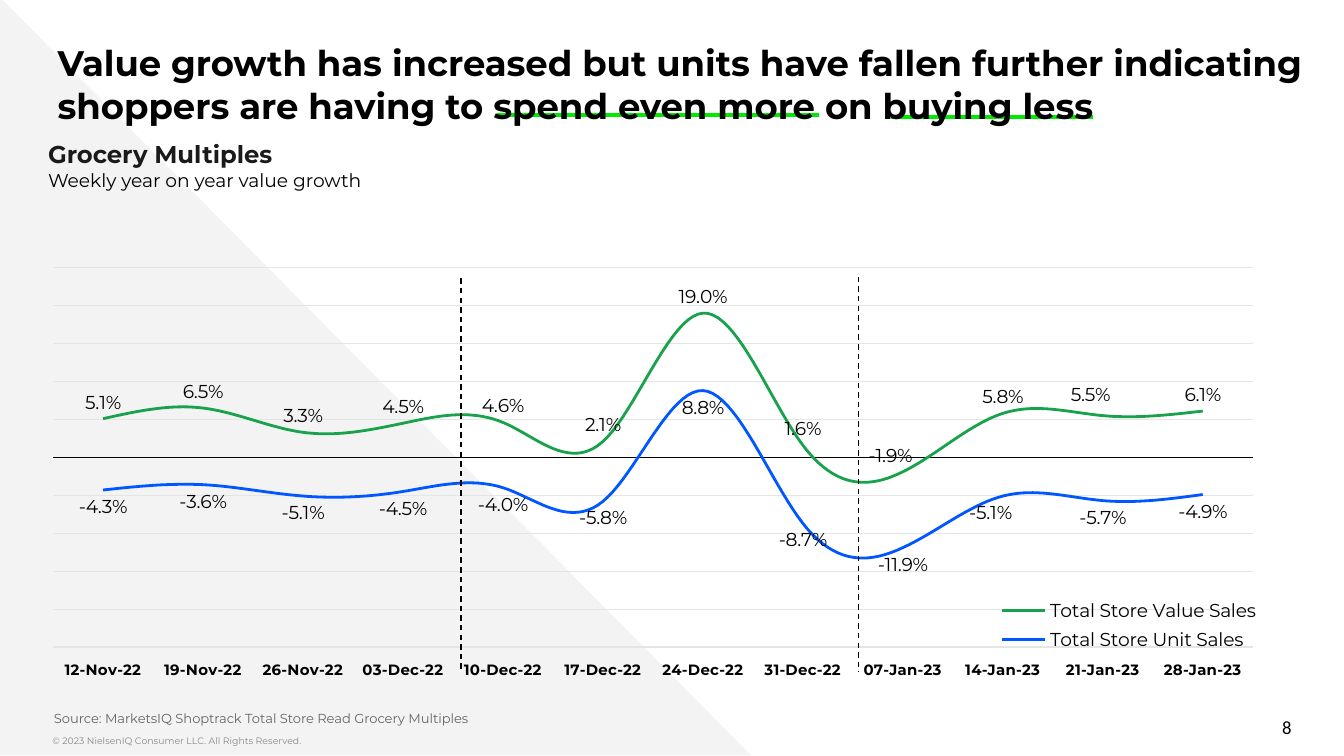
"""Build the weekly value and unit growth slide for grocery multiples."""
import pptx
import pptx.chart.data
import pptx.dml.color
import pptx.enum.chart
import pptx.enum.dml
import pptx.enum.shapes
import pptx.enum.text
import pptx.oxml
import pptx.oxml.ns
import pptx.util

Cm = pptx.util.Cm
Pt = pptx.util.Pt

COLORS = {
    "black": "000000", "heading": "1A1A1A", "source": "666666", "copyright": "888888",
    "backdrop": "F3F3F3", "grid": "E5E5E5", "value": "17A24B", "unit": "0056FF",
    "highlight": "00EB00",
}
FONT = "Montserrat"
PERCENT = "0.0%"
ABOVE = pptx.enum.chart.XL_LABEL_POSITION.ABOVE
BELOW = pptx.enum.chart.XL_LABEL_POSITION.BELOW

TITLE = ("Value growth has increased but units have fallen further indicating "
         "shoppers are having to spend even more on buying less")
HEADING = "Grocery Multiples"
SUBHEADING = "Weekly year on year value growth"
SOURCE = "Source: MarketsIQ Shoptrack Total Store Read Grocery Multiples"
COPYRIGHT = "© 2023 NielsenIQ Consumer LLC. All Rights Reserved."
PAGE_NUMBER = "8"

WEEKS = ["12-Nov-22", "19-Nov-22", "26-Nov-22", "03-Dec-22", "10-Dec-22", "17-Dec-22",
         "24-Dec-22", "31-Dec-22", "07-Jan-23", "14-Jan-23", "21-Jan-23", "28-Jan-23"]
SERIES = [
    {"name": "Total Store Value Sales", "color": "value", "position": ABOVE,
     "percents": [5.1, 6.5, 3.3, 4.5, 4.6, 2.1, 19.0, 1.6, -1.9, 5.8, 5.5, 6.1],
     "label_shifts": {8: (-0.01, 0), 10: (-0.01, -0.01)}},
    {"name": "Total Store Unit Sales", "color": "unit", "position": BELOW,
     "percents": [-4.3, -3.6, -5.1, -4.5, -4.0, -5.8, 8.8, -8.7, -11.9, -5.1, -5.7, -4.9],
     "label_shifts": {9: (-0.01, 0)}},
]
PERIOD_DIVIDERS = [(8.71, 5.26, 8.71, 12.7), (16.23, 5.23, 16.23, 12.7)]
UNDERLINES = [(9.4, 2.18, 15.47, 2.18), (16.84, 2.21, 20.65, 2.21)]


def rgb(name):
    return pptx.dml.color.RGBColor.from_string(COLORS[name])


def style_font(font, size, color="black", bold=False, name=FONT):
    font.size = Pt(size)
    font.name = name
    font.bold = bold
    font.color.rgb = rgb(color)


def add_text(page, place, text, styles, inset=0.13):
    box = page.shapes.add_textbox(*map(Cm, place))
    frame = box.text_frame
    frame.word_wrap = True
    frame.margin_left = frame.margin_right = 0
    frame.margin_top = frame.margin_bottom = Cm(inset)
    frame.text = text
    para = frame.paragraphs[0]
    for span, style in zip(para.runs, styles):
        style_font(span.font, **style)
    return frame


def add_line(page, ends, color, width, dash=None):
    line = page.shapes.add_connector(pptx.enum.shapes.MSO_CONNECTOR.STRAIGHT, *map(Cm, ends))
    line.line.color.rgb = rgb(color)
    line.line.width = Pt(width)
    if dash:
        line.line.dash_style = dash
    line._element.spPr.append(pptx.oxml.parse_xml(
        "<a:effectLst %s/>" % pptx.oxml.ns.nsdecls("a")))


def layout_xml(**settings):
    entries = "".join('<c:%s val="%s"/>' % item for item in settings.items())
    return pptx.oxml.parse_xml("<c:layout %s><c:manualLayout>%s</c:manualLayout></c:layout>"
                               % (pptx.oxml.ns.nsdecls("c"), entries))


def style_series(series, item):
    series.smooth = True
    series.marker.style = pptx.enum.chart.XL_MARKER_STYLE.NONE
    series.format.line.color.rgb = rgb(item["color"])
    series.format.line.width = Pt(1.5)
    labels = series.data_labels
    labels.show_value = True
    labels.number_format = PERCENT
    labels.number_format_is_linked = False
    labels.position = item["position"]
    style_font(labels.font, 10)
    for index, (x, y) in item["label_shifts"].items():
        label = series.points[index].data_label
        style_font(label.font, 10)
        label.position = item["position"]
        label._dLbl.insert(1, layout_xml(x=x, y=y))


def add_growth_chart(page):
    data = pptx.chart.data.CategoryChartData(number_format=PERCENT)
    data.categories = WEEKS
    for item in SERIES:
        data.add_series(item["name"], [round(percent / 100, 3) for percent in item["percents"]])
    chart = page.shapes.add_chart(pptx.enum.chart.XL_CHART_TYPE.LINE,
                                  Cm(0.99), Cm(4.5), Cm(23.39), Cm(9.32), data).chart
    chart.has_title = False
    style_font(chart.font, 10, name="Arial")
    chart.plots[0].vary_by_categories = False

    weeks = chart.category_axis
    weeks.tick_label_position = pptx.enum.chart.XL_TICK_LABEL_POSITION.LOW
    weeks.major_tick_mark = weeks.minor_tick_mark = pptx.enum.chart.XL_TICK_MARK.NONE
    weeks.format.line.color.rgb = rgb("black")
    weeks.format.line.width = Pt(0.75)
    style_font(weeks.tick_labels.font, 8, bold=True)

    growth = chart.value_axis
    growth.visible = False
    growth.minimum_scale, growth.maximum_scale, growth.major_unit = -0.25, 0.25, 0.05
    growth.major_gridlines.format.line.color.rgb = rgb("grid")
    growth.major_gridlines.format.line.width = Pt(0.75)

    chart.has_legend = True
    legend = chart.legend
    legend.position = pptx.enum.chart.XL_LEGEND_POSITION.LEFT
    legend.include_in_layout = False
    style_font(legend.font, 10)
    for old in legend._element.findall(pptx.oxml.ns.qn("c:layout")):
        legend._element.remove(old)
    legend._element.insert(1, layout_xml(xMode="edge", yMode="edge",
                                         x=0.76, y=0.72, w=0.22, h=0.13))

    area = chart._chartSpace.chart.plotArea
    for old in area.findall(pptx.oxml.ns.qn("c:layout")):
        area.remove(old)
    area.insert(0, layout_xml(layoutTarget="inner", xMode="edge", yMode="edge",
                              x=0, y=0.06, w=0.97, h=0.77))
    for series, item in zip(chart.plots[0].series, SERIES):
        style_series(series, item)


def main():
    deck = pptx.Presentation()
    deck.slide_width, deck.slide_height = Cm(25.4), Cm(14.29)
    page = deck.slides.add_slide(deck.slide_layouts[6])

    backdrop = page.shapes.add_shape(pptx.enum.shapes.MSO_SHAPE.RIGHT_TRIANGLE,
                                     Cm(0), Cm(-0.05), Cm(14.2), Cm(14.33))
    backdrop.shadow.inherit = False
    backdrop.fill.solid()
    backdrop.fill.fore_color.rgb = rgb("backdrop")
    backdrop.line.fill.background()

    add_text(page, (0.99, 13.79, 14.07, 0.51), COPYRIGHT, [{"size": 5, "color": "copyright"}])
    number = add_text(page, (18.69, 13.36, 5.72, 0.76), PAGE_NUMBER,
                      [{"size": 10, "name": "Calibri"}])
    number.vertical_anchor = pptx.enum.text.MSO_ANCHOR.MIDDLE
    number.paragraphs[0].alignment = pptx.enum.text.PP_ALIGN.RIGHT
    add_text(page, (0.91, 2.51, 10.57, 1.37), HEADING + "\v" + SUBHEADING,
             [{"size": 13, "color": "heading", "bold": True}, {"size": 10}])
    add_text(page, (1.02, 13.28, 22.25, 0.51), SOURCE,
             [{"size": 7, "color": "source"}], inset=0.25)

    add_growth_chart(page)
    for ends in PERIOD_DIVIDERS:
        add_line(page, ends, "black", 0.75, pptx.enum.dml.MSO_LINE.DASH)
    for ends in UNDERLINES:
        add_line(page, ends, "highlight", 2.25)
    add_text(page, (1.09, 0.53, 24.05, 1.09), TITLE, [{"size": 19, "bold": True}], inset=0.25)

    deck.save("out.pptx")


if __name__ == "__main__":
    main()
